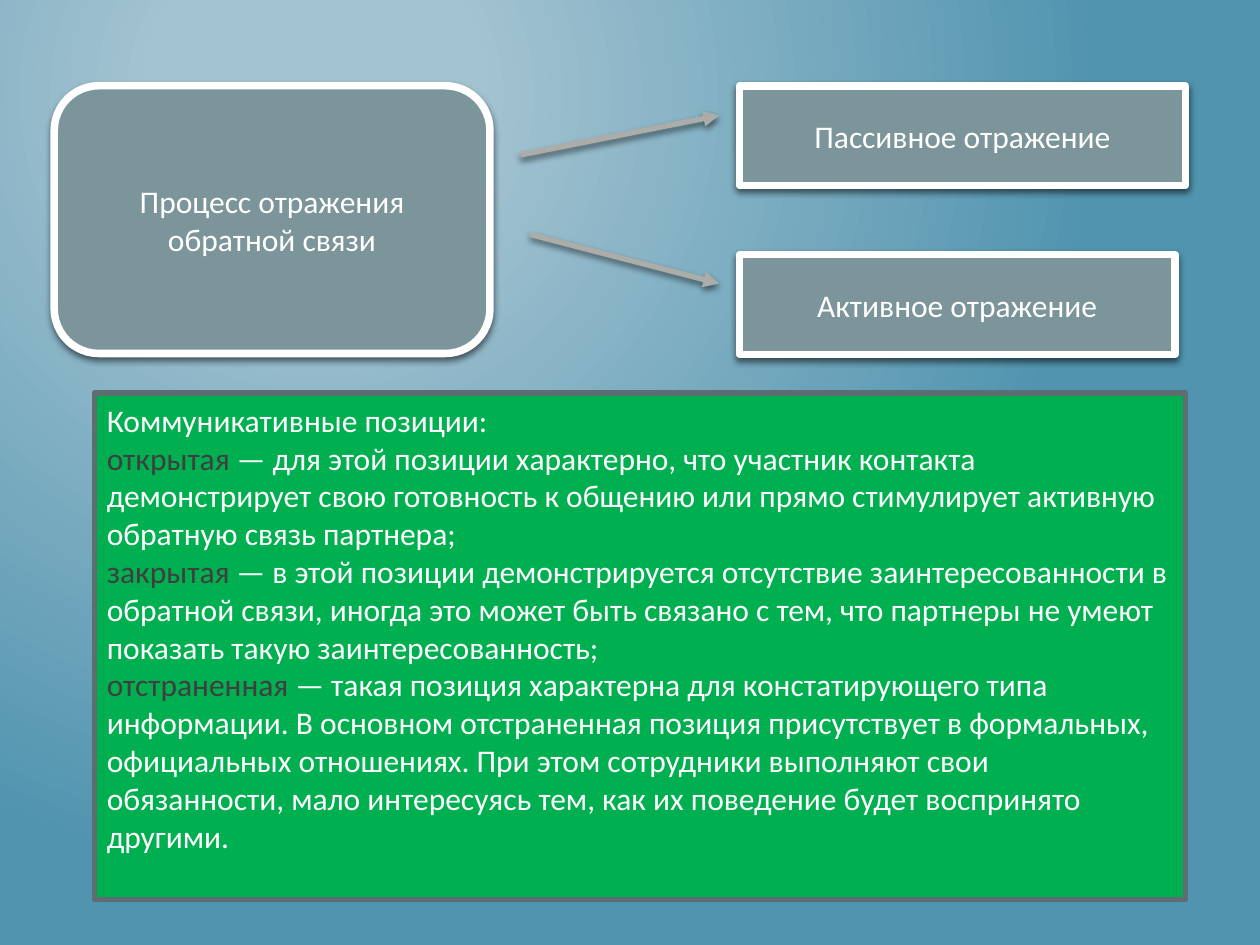
from lxml.etree import SubElement
from pptx import Presentation
from pptx.dml.color import RGBColor
from pptx.enum.shapes import MSO_CONNECTOR, MSO_SHAPE
from pptx.enum.text import MSO_ANCHOR, PP_ALIGN
from pptx.oxml.ns import qn
from pptx.util import Pt

COLORS = {
    "glow": "A3C3D1", "edge": "5194AF", "box": "7C959A", "white": "FFFFFF",
    "arrow": "ACADA8", "panel": "00B050", "frame": "5C6E72", "term": "3F3F3F",
}
FONT = {"name": "Calibri", "size": Pt(18)}
BOX_LINE, THIN_LINE = 4.32, 3.03

POSITIONS = [
    ("", "Коммуникативные позиции:"),
    ("открытая ", "— для этой позиции характерно, что участник контакта демонстрирует "
     "свою готовность к общению или прямо стимулирует активную обратную связь партнера;"),
    ("закрытая ", "— в этой позиции демонстрируется отсутствие заинтересованности в "
     "обратной связи, иногда это может быть связано с тем, что партнеры не умеют "
     "показать такую заинтересованность;"),
    ("отстраненная ", "— такая позиция характерна для констатирующего типа информации. "
     "В основном отстраненная позиция присутствует в формальных, официальных отношениях. "
     "При этом сотрудники выполняют свои обязанности, мало интересуясь тем, как их "
     "поведение будет воспринято другими."),
]


def rgb(name):
    return RGBColor.from_string(COLORS[name])


class Deck:
    def __init__(self, width, height):
        self.prs = Presentation()
        self.prs.slide_width, self.prs.slide_height = Pt(width), Pt(height)
        self.s = self.prs.slides.add_slide(self.prs.slide_layouts[6])

    def background(self):
        """Radial gradient whose centre lies towards the top left."""
        fill = self.s.background.fill
        fill.gradient()
        for stop, name, position in zip(fill.gradient_stops, ("glow", "edge"), (0.2, 1)):
            stop.color.rgb, stop.position = rgb(name), position
        grad = self.s.background._cSld.find(".//" + qn("a:gradFill"))
        grad.remove(grad.find(qn("a:lin")))
        circle = SubElement(grad, qn("a:path"), {"path": "circle"})
        SubElement(circle, qn("a:fillToRect"),
                   {"l": "50000", "t": "20000", "r": "100000", "b": "100000"})

    def shadow(self, shape):
        effects = SubElement(shape._element.spPr, qn("a:effectLst"))
        outer = SubElement(effects, qn("a:outerShdw"), {
            "blurRad": str(Pt(4)), "dist": str(Pt(2)), "dir": "5400000", "rotWithShape": "0"})
        color = SubElement(outer, qn("a:srgbClr"), {"val": "000000"})
        SubElement(color, qn("a:alpha"), {"val": "55000"})

    def shape(self, kind, bounds, fill, line, width):
        sp = self.s.shapes.add_shape(kind, *map(Pt, bounds))
        sp.fill.solid()
        sp.fill.fore_color.rgb = rgb(fill)
        sp.line.color.rgb, sp.line.width = rgb(line), Pt(width)
        sp.text_frame.word_wrap = True
        return sp

    def run(self, p, text, color):
        r = p.add_run()
        r.text = text
        for key, value in FONT.items():
            setattr(r.font, key, value)
        r.font.color.rgb = rgb(color)

    def box(self, text, bounds, kind=MSO_SHAPE.RECTANGLE):
        sp = self.shape(kind, bounds, "box", "white", BOX_LINE)
        self.shadow(sp)
        sp.text_frame.vertical_anchor = MSO_ANCHOR.MIDDLE
        p = sp.text_frame.paragraphs[0]
        p.alignment = PP_ALIGN.CENTER
        self.run(p, text, "white")

    def arrow(self, *ends):
        c = self.s.shapes.add_connector(MSO_CONNECTOR.STRAIGHT, *map(Pt, ends))
        c.line.color.rgb, c.line.width = rgb("arrow"), Pt(THIN_LINE)
        SubElement(c.line._get_or_add_ln(), qn("a:tailEnd"), {"type": "triangle"})
        self.shadow(c)

    def panel(self, items, bounds):
        sp = self.shape(MSO_SHAPE.RECTANGLE, bounds, "panel", "frame", THIN_LINE)
        sp.shadow.inherit = False
        tf = sp.text_frame
        tf.vertical_anchor, tf.margin_top = MSO_ANCHOR.TOP, Pt(4.5)
        for i, (term, text) in enumerate(items):
            p = tf.add_paragraph() if i else tf.paragraphs[0]
            p.alignment = PP_ALIGN.LEFT
            if term:
                self.run(p, term, "term")
            self.run(p, text, "white")


def main():
    deck = Deck(720, 540)
    deck.background()
    deck.box("Процесс отражения обратной связи", (31, 49, 249, 153),
             MSO_SHAPE.ROUNDED_RECTANGLE)
    deck.arrow(297.5, 88.5, 411, 66)
    deck.arrow(303, 134, 411, 162)
    deck.box("Пассивное отражение", (422.5, 49, 255, 57))
    deck.box("Активное отражение", (422.5, 145.5, 249, 57))
    deck.panel(POSITIONS, (54, 224.5, 623.5, 289.5))
    deck.prs.save("out.pptx")


if __name__ == "__main__":
    main()
